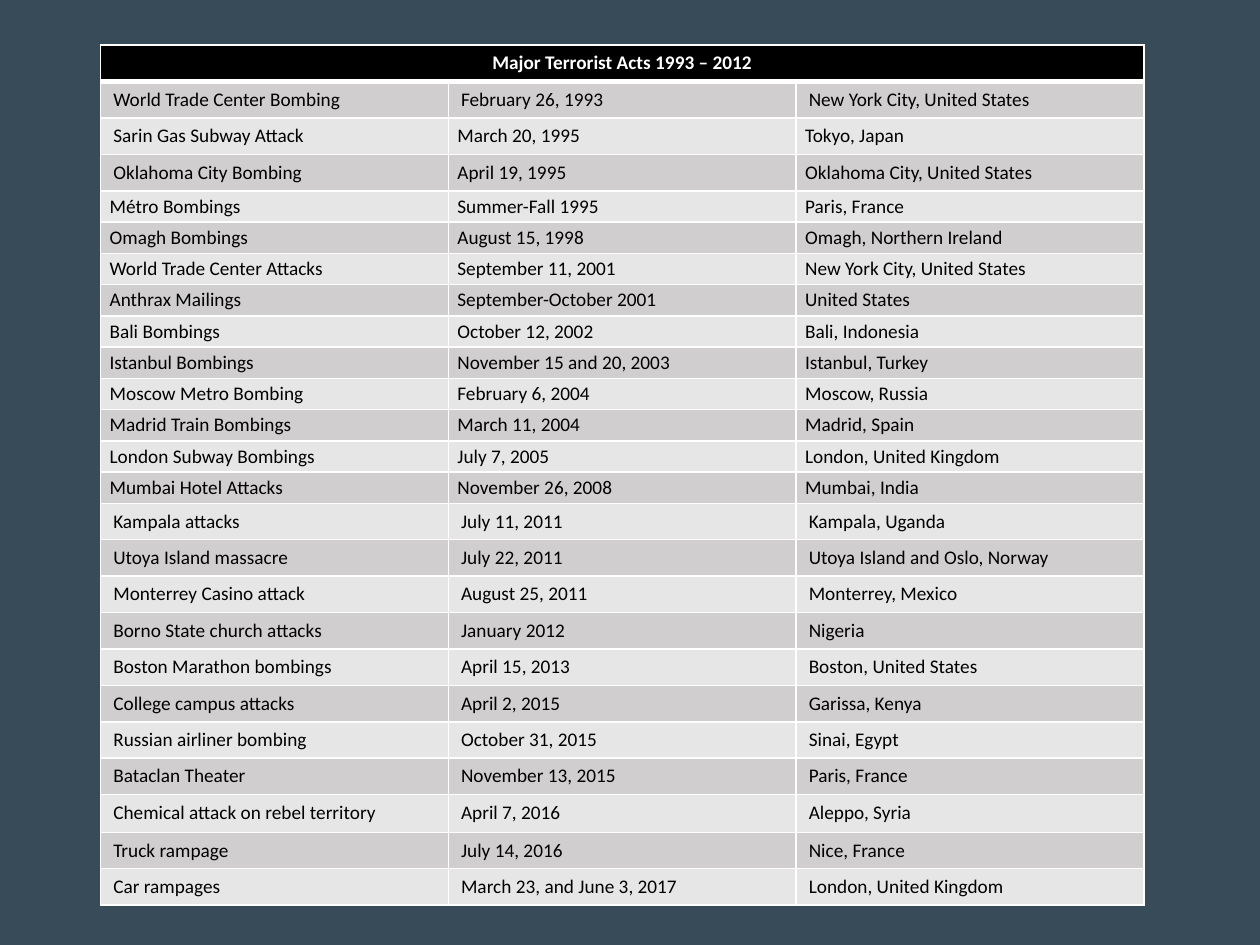
from lxml.etree import SubElement
from pptx import Presentation
from pptx.dml.color import RGBColor
from pptx.enum.text import MSO_ANCHOR as ANCHOR, PP_ALIGN as ALIGN
from pptx.oxml.ns import qn
from pptx.util import Cm, Pt

TITLE = "Major Terrorist Acts 1993 – 2012"
ACTS = [
    ("World Trade Center Bombing", "February 26, 1993", "New York City, United States"),
    ("Sarin Gas Subway Attack", "March 20, 1995", "Tokyo, Japan"),
    ("Oklahoma City Bombing", "April 19, 1995", "Oklahoma City, United States"),
    ("Métro Bombings", "Summer-Fall 1995", "Paris, France"),
    ("Omagh Bombings", "August 15, 1998", "Omagh, Northern Ireland"),
    ("World Trade Center Attacks", "September 11, 2001", "New York City, United States"),
    ("Anthrax Mailings", "September-October 2001", "United States"),
    ("Bali Bombings", "October 12, 2002", "Bali, Indonesia"),
    ("Istanbul Bombings", "November 15 and 20, 2003", "Istanbul, Turkey"),
    ("Moscow Metro Bombing", "February 6, 2004", "Moscow, Russia"),
    ("Madrid Train Bombings", "March 11, 2004", "Madrid, Spain"),
    ("London Subway Bombings", "July 7, 2005", "London, United Kingdom"),
    ("Mumbai Hotel Attacks", "November 26, 2008", "Mumbai, India"),
    ("Kampala attacks", "July 11, 2011", "Kampala, Uganda"),
    ("Utoya Island massacre", "July 22, 2011", "Utoya Island and Oslo, Norway"),
    ("Monterrey Casino attack", "August 25, 2011", "Monterrey, Mexico"),
    ("Borno State church attacks", "January 2012", "Nigeria"),
    ("Boston Marathon bombings", "April 15, 2013", "Boston, United States"),
    ("College campus attacks", "April 2, 2015", "Garissa, Kenya"),
    ("Russian airliner bombing", "October 31, 2015", "Sinai, Egypt"),
    ("Bataclan Theater", "November 13, 2015", "Paris, France"),
    ("Chemical attack on rebel territory", "April 7, 2016", "Aleppo, Syria"),
    ("Truck rampage", "July 14, 2016", "Nice, France"),
    ("Car rampages", "March 23, and June 3, 2017", "London, United Kingdom"),
]
BANDS = ("E7E6E6", "D0CECE")
COLUMN_WIDTH = Cm(7.01)
ROW_HEIGHT, COMPACT_HEIGHT, TRUCK_HEIGHT = Cm(0.66), Cm(0.63), Cm(0.76)
COMPACT_ROWS = range(4, 14)
TRUCK_ROW = 22


def rgb(color):
    return RGBColor.from_string(color)


def set_borders(cell, top=1, bottom=1):
    """Draw white cell borders; widths are in points."""
    tc_pr = cell._tc.get_or_add_tcPr()
    for side, width in (("L", 1), ("R", 1), ("T", top), ("B", bottom)):
        ln = SubElement(tc_pr, qn(f"a:ln{side}"), w=str(Pt(width)))
        fill = SubElement(ln, qn("a:solidFill"))
        SubElement(fill, qn("a:srgbClr"), val="FFFFFF")


def fill_cell(cell, color):
    cell.fill.solid()
    cell.fill.fore_color.rgb = rgb(color)


def write_cell(cell, text, color="000000", bold=False, align=ALIGN.LEFT):
    p = cell.text_frame.paragraphs[0]
    p.alignment = align
    r = p.add_run()
    r.text = text
    r.font.name = "Calibri"
    r.font.size = Pt(11)
    r.font.bold = bold
    r.font.color.rgb = rgb(color)


def place_text(cell, row, column):
    """Earliest acts sit low, the next ones are centred in tight cells."""
    if row == 1 or (row in (2, 3) and column == 0):
        cell.vertical_anchor = ANCHOR.BOTTOM
    elif row < COMPACT_ROWS.stop:
        cell.vertical_anchor = ANCHOR.MIDDLE
        cell.margin_left = cell.margin_right = Cm(0.18)
        cell.margin_top = cell.margin_bottom = 0


def row_height(row):
    if row == TRUCK_ROW:
        return TRUCK_HEIGHT
    return COMPACT_HEIGHT if row in COMPACT_ROWS else ROW_HEIGHT


def add_header(table):
    for cell in table.rows[0].cells:
        set_borders(cell, bottom=3)
        fill_cell(cell, "000000")
    header = table.cell(0, 0)
    header.merge(table.cell(0, 2))
    write_cell(header, TITLE, "FFFFFF", True, ALIGN.CENTER)


def add_acts(table):
    for row, act in enumerate(ACTS, 1):
        for column, text in enumerate(act):
            cell = table.cell(row, column)
            set_borders(cell, top=3 if row == 1 else 1)
            fill_cell(cell, BANDS[row % 2])
            place_text(cell, row, column)
            write_cell(cell, text)


def add_acts_table(slide):
    heights = [row_height(row) for row in range(len(ACTS) + 1)]
    frame = slide.shapes.add_table(len(heights), 3, Cm(2.03), Cm(0.91),
                                   3 * COLUMN_WIDTH, sum(heights))
    table = frame.table
    table.horz_banding = False
    for column in table.columns:
        column.width = COLUMN_WIDTH
    for row, height in zip(table.rows, heights):
        row.height = height
    add_header(table)
    add_acts(table)


def main():
    prs = Presentation()
    prs.slide_width, prs.slide_height = Cm(25.4), Cm(19.05)
    slide = prs.slides.add_slide(prs.slide_layouts[6])
    slide.background.fill.solid()
    slide.background.fill.fore_color.rgb = rgb("384B59")
    add_acts_table(slide)
    prs.save("out.pptx")


if __name__ == "__main__":
    main()
